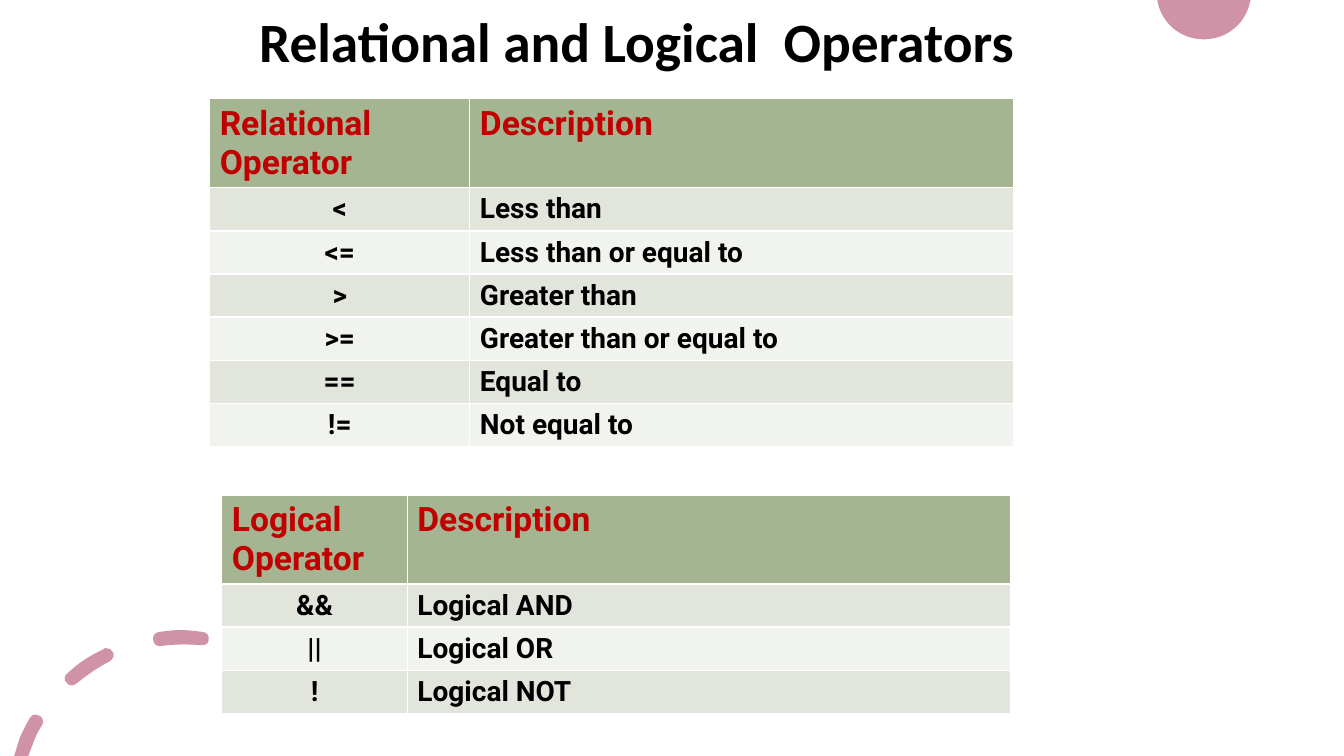
import lxml.etree
import pptx
import pptx.dml.color
import pptx.enum.text
import pptx.oxml.ns
import pptx.util

Inches = pptx.util.Inches
Align = pptx.enum.text.PP_ALIGN
qn = pptx.oxml.ns.qn

PINK, HEADER_GREEN, HEADER_RED = "D092A7", "A5B592", "C00000"
BANDS = ("E1E5DC", "F0F3EE")

RELATIONAL = [
    ("Relational\nOperator", "Description"),
    ("<", "Less than"),
    ("<=", "Less than or equal to"),
    (">", "Greater than"),
    (">=", "Greater than or equal to"),
    ("==", "Equal to"),
    ("!=", "Not equal to"),
]
LOGICAL = [
    ("Logical Operator", "Description"),
    ("&&", "Logical AND"),
    ("||", "Logical OR"),
    ("!", "Logical NOT"),
]

# Outlines: a start point, then line ends (2 numbers) or Bezier curves (6 numbers)
CIRCLE = [
    [(11.48, 0), (12.41, 0), (12.4, 0.01), (12.36, 0.23, 12.17, 0.39, 11.94, 0.39),
     (11.71, 0.39, 11.52, 0.23, 11.48, 0.01)],
]
DASHES = [
    [(0.36, 7.09), (0.34, 7.08, 0.31, 7.1, 0.3, 7.12), (0.26, 7.18, 0.23, 7.25, 0.2, 7.31),
     (0.14, 7.5), (0.28, 7.5), (0.33, 7.37), (0.35, 7.31, 0.38, 7.25, 0.42, 7.19),
     (0.44, 7.16, 0.42, 7.11, 0.39, 7.1), (0.38, 7.09, 0.37, 7.09, 0.36, 7.09)],
    [(1.05, 6.43), (1.04, 6.43, 1.03, 6.43, 1.03, 6.44), (0.9, 6.5, 0.77, 6.58, 0.67, 6.68),
     (0.64, 6.7, 0.63, 6.75, 0.66, 6.77), (0.67, 6.79, 0.69, 6.8, 0.71, 6.8), (0.71, 6.8),
     (0.73, 6.8, 0.74, 6.79, 0.76, 6.78), (0.86, 6.7, 0.97, 6.62, 1.09, 6.56),
     (1.12, 6.54, 1.14, 6.5, 1.12, 6.47), (1.11, 6.44, 1.08, 6.43, 1.05, 6.43)],
    [(1.79, 6.25), (1.72, 6.25, 1.65, 6.26, 1.58, 6.27), (1.54, 6.27, 1.51, 6.31, 1.52, 6.35),
     (1.52, 6.38, 1.55, 6.41, 1.58, 6.41), (1.59, 6.41, 1.59, 6.41, 1.59, 6.41),
     (1.73, 6.39, 1.86, 6.39, 1.99, 6.4), (2.03, 6.41, 2.07, 6.38, 2.07, 6.35),
     (2.08, 6.31, 2.05, 6.27, 2.01, 6.27), (2.01, 6.27, 2.01, 6.27, 2.01, 6.27),
     (1.94, 6.26, 1.86, 6.25, 1.79, 6.25)],
]


def color(hex_string):
    return pptx.dml.color.RGBColor.from_string(hex_string)


def format_text(text_frame, font_name, size, hex_string, alignment):
    for paragraph in text_frame.paragraphs:
        paragraph.alignment = alignment
        for run in paragraph.runs:
            run.font.name = font_name
            run.font.size = pptx.util.Pt(size)
            run.font.bold = True
            run.font.color.rgb = color(hex_string)


def bend_segments(shape, outlines):
    """Turn the straight segments that have control points into Bezier curves."""
    segments = [segment for outline in outlines for segment in outline[1:]]
    lines = list(shape._element.iter(qn("a:lnTo")))
    for line, segment in zip(lines, segments):
        if len(segment) == 2:
            continue
        curve = lxml.etree.Element(qn("a:cubicBezTo"))
        for x, y in zip(segment[::2], segment[1::2]):
            lxml.etree.SubElement(curve, qn("a:pt"), x=str(Inches(x) - shape.left),
                                  y=str(Inches(y) - shape.top))
        line.getparent().replace(line, curve)


def add_decoration(slide, outlines):
    contours = [[(Inches(segment[-2]), Inches(segment[-1])) for segment in outline]
                for outline in outlines]
    builder = slide.shapes.build_freeform(*contours[0][0])
    for number, contour in enumerate(contours):
        if number:
            builder.move_to(*contour[0])
        builder.add_line_segments(contour[1:], close=True)
    shape = builder.convert_to_shape()
    bend_segments(shape, outlines)
    shape.shadow.inherit = False
    shape.fill.solid()
    shape.fill.fore_color.rgb = color(PINK)
    shape.line.fill.background()


def add_title(slide, left, top, width, height):
    title = slide.shapes.title
    title.left, title.top = Inches(left), Inches(top)
    title.width, title.height = Inches(width), Inches(height)
    text_frame = title.text_frame
    text_frame.text = "Relational and Logical  Operators"
    text_frame.auto_size = pptx.enum.text.MSO_AUTO_SIZE.NONE
    text_frame.vertical_anchor = pptx.enum.text.MSO_ANCHOR.MIDDLE
    text_frame.paragraphs[0].line_spacing = 0.9
    format_text(text_frame, "Calibri", 39.6, "000000", Align.LEFT)
    text_frame.paragraphs[0].add_line_break()


def add_operator_table(slide, left, top, height, column_widths, row_heights, rows):
    frame = slide.shapes.add_table(
        len(rows), len(column_widths), Inches(left), Inches(top),
        Inches(sum(column_widths)), Inches(height))
    table = frame.table
    for column, width in zip(table.columns, column_widths):
        column.width = Inches(width)
    for row_index, (values, row_height) in enumerate(zip(rows, row_heights)):
        table.rows[row_index].height = Inches(row_height)
        for column_index, value in enumerate(values):
            cell = table.cell(row_index, column_index)
            cell.text_frame.text = value
            cell.fill.solid()
            if row_index == 0:
                cell.fill.fore_color.rgb = color(HEADER_GREEN)
                format_text(cell.text_frame, "Roboto", 24, HEADER_RED, Align.LEFT)
            else:
                cell.fill.fore_color.rgb = color(BANDS[(row_index - 1) % 2])
                alignment = Align.LEFT if column_index else Align.CENTER
                format_text(cell.text_frame, "Roboto", 20, "000000", alignment)
    frame.height = Inches(height)


def main():
    presentation = pptx.Presentation()
    presentation.slide_width = Inches(13.33)
    presentation.slide_height = Inches(7.5)
    slide = presentation.slides.add_slide(presentation.slide_layouts[5])

    # Corner decorations
    add_decoration(slide, CIRCLE)
    add_decoration(slide, DASHES)

    # Title and the two operator tables
    add_title(slide, 2.47, 0.43, 9.06, 0.75)
    add_operator_table(slide, 2.08, 0.98, 3.5, (2.58, 5.39), [0.74] + [0.41] * 6, RELATIONAL)
    add_operator_table(slide, 2.2, 4.91, 2.2, (1.84, 5.98), [0.39] * 4, LOGICAL)

    presentation.save("out.pptx")


if __name__ == "__main__":
    main()
